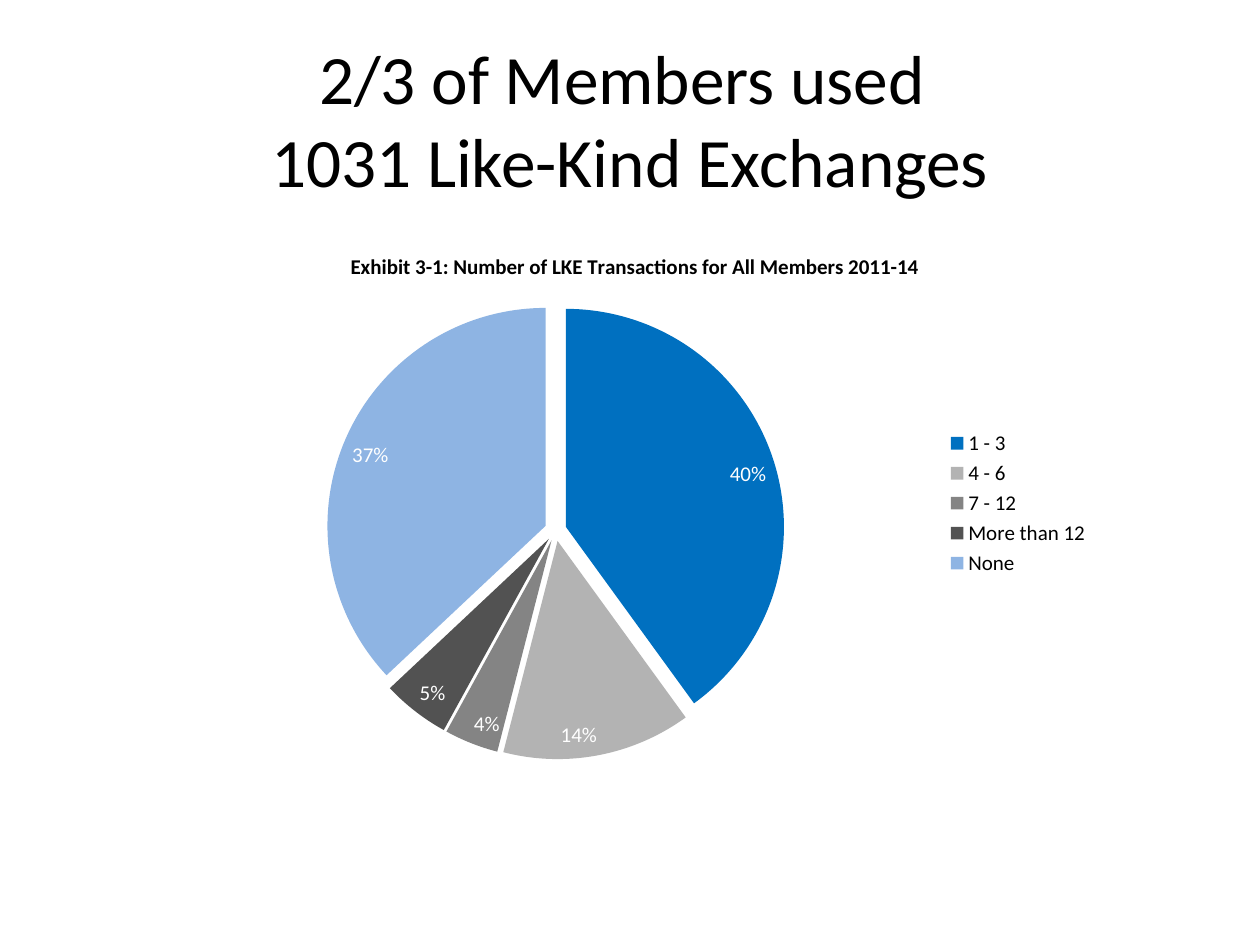
import pptx
import pptx.chart.data
import pptx.dml.color
import pptx.enum.chart
import pptx.enum.text
import pptx.oxml
import pptx.oxml.ns
import pptx.util

RGBColor = pptx.dml.color.RGBColor
BLACK = RGBColor(0x00, 0x00, 0x00)
WHITE = RGBColor(0xFF, 0xFF, 0xFF)
BLUE = RGBColor(0x00, 0x70, 0xC0)
LIGHT_GREY = RGBColor(0xB3, 0xB3, 0xB3)
MID_GREY = RGBColor(0x84, 0x84, 0x84)
DARK_GREY = RGBColor(0x52, 0x52, 0x52)
PALE_BLUE = RGBColor(0x8E, 0xB4, 0xE3)

FONT = "Calibri"
WIDTH, HEIGHT = pptx.util.Inches(10), pptx.util.Inches(7.5)

# Transactions per member: label, share, slice colour
SLICES = [
    ("1 - 3", 0.40, BLUE),
    ("4 - 6", 0.14, LIGHT_GREY),
    ("7 - 12", 0.04, MID_GREY),
    ("More than 12", 0.05, DARK_GREY),
    ("None", 0.37, PALE_BLUE),
]


def area(left, top, width, height):
    """Turn shares of the slide into lengths."""
    return (int(left * WIDTH), int(top * HEIGHT),
            int(width * WIDTH), int(height * HEIGHT))


def set_font(font, size, color, bold=False):
    font.name = FONT
    font.size = pptx.util.Pt(size)
    font.color.rgb = color
    font.bold = bold


def set_title(page, text):
    title = page.shapes.title
    title.left, title.top, title.width, title.height = area(0.05, 0.04, 0.9, 0.17)
    frame = title.text_frame
    frame.text = text
    frame.vertical_anchor = pptx.enum.text.MSO_ANCHOR.MIDDLE
    paragraph = frame.paragraphs[0]
    paragraph.alignment = pptx.enum.text.PP_ALIGN.CENTER
    for span in paragraph.runs:
        set_font(span.font, 39.6, BLACK)


def place_plot(chart, **shares):
    """Fix the plot area as shares of the chart."""
    plot_area = chart.plots[0]._element.getparent()
    for old in plot_area.findall(pptx.oxml.ns.qn("c:layout")):
        plot_area.remove(old)
    modes = '<c:layoutTarget val="inner"/><c:xMode val="edge"/><c:yMode val="edge"/>'
    values = "".join(f'<c:{name} val="{share}"/>' for name, share in shares.items())
    plot_area.insert(0, pptx.oxml.parse_xml(
        f'<c:layout {pptx.oxml.ns.nsdecls("c")}><c:manualLayout>'
        f"{modes}{values}</c:manualLayout></c:layout>"))


def explode(series, percent):
    explosion = pptx.oxml.parse_xml(
        f'<c:explosion {pptx.oxml.ns.nsdecls("c")} val="{percent}"/>')
    series._element.get_or_add_spPr().addnext(explosion)


def add_pie(page, heading):
    data = pptx.chart.data.CategoryChartData(number_format="0%")
    data.categories = [label for label, _, _ in SLICES]
    data.add_series("Series 1", [share for _, share, _ in SLICES])
    chart = page.shapes.add_chart(
        pptx.enum.chart.XL_CHART_TYPE.PIE, *area(0.133, 0.244, 0.742, 0.577), data).chart
    set_font(chart.font, 10, BLACK)

    # Heading and legend
    chart.has_title = True
    chart.chart_title.include_in_layout = False
    chart.chart_title.text_frame.text = heading
    set_font(chart.chart_title.text_frame.paragraphs[0].runs[0].font, 12, BLACK, True)
    chart.has_legend = True
    chart.legend.position = pptx.enum.chart.XL_LEGEND_POSITION.RIGHT
    chart.legend.include_in_layout = False
    set_font(chart.legend.font, 12, BLACK)

    # Slices
    plot = chart.plots[0]
    plot.vary_by_categories = True
    series = plot.series[0]
    explode(series, 5)
    for index, (_, _, color) in enumerate(SLICES):
        fill = series.points[index].format.fill
        fill.solid()
        fill.fore_color.rgb = color
    place_plot(chart, x=0.17, y=0.13, w=0.49, h=0.84)

    # Value labels
    plot.has_data_labels = True
    labels = plot.data_labels
    labels.show_value = True
    labels.number_format = "0%"
    labels.number_format_is_linked = False
    labels.position = pptx.enum.chart.XL_LABEL_POSITION.INSIDE_END
    set_font(labels.font, 12, WHITE)


def main():
    deck = pptx.Presentation()
    deck.slide_width, deck.slide_height = WIDTH, HEIGHT
    page = deck.slides.add_slide(deck.slide_layouts.get_by_name("Title Only"))
    set_title(page, "2/3 of Members used \v1031 Like-Kind Exchanges")
    add_pie(page, "Exhibit 3-1: Number of LKE Transactions for All Members 2011-14")
    deck.save("out.pptx")


if __name__ == "__main__":
    main()
